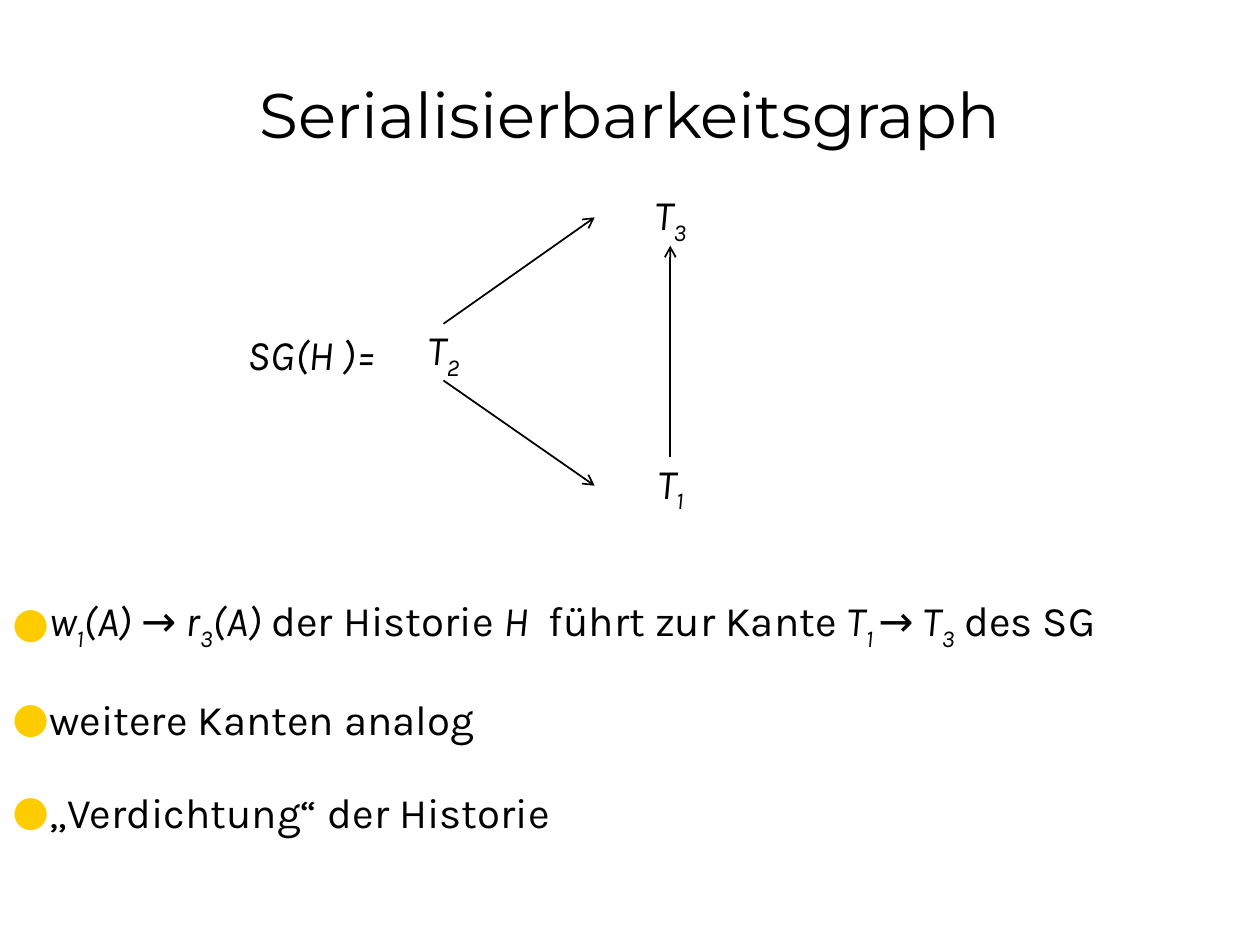
"""Build the slide on the serialisation graph."""
from lxml import etree
from pptx import Presentation
from pptx import util as u
from pptx.dml.color import RGBColor
from pptx.enum import shapes, text
from pptx.oxml.ns import qn

COLORS = {"ink": "000000", "dot": "FFCC00"}
TITLE = "Serialisierbarkeitsgraph"
LABEL = [("SG(H )=", "i")]
NODES = {"3": (4.72, 1.5), "1": (4.72, 3.63), "2": (2.92, 2.57)}
NODE_SIZE = (1.2, 0.45)
EDGES = [("1", 0, "3", 2), ("2", 2, "1", 1), ("2", 0, "3", 1)]
BULLETS = [
    [("w", "i"), ("1", "is"), ("(A) → r", "i"), ("3", "is"), ("(A)", "i"),
     (" der Historie ", ""), ("H", "i"), ("  führt zur Kante ", ""),
     ("T", "i"), ("1 ", "is"), ("→ T", "i"), ("3", "is"), (" des SG", "")],
    [("weitere Kanten analog", "")],
    [("„Verdichtung“ der Historie", "")],
]


def add_bullet(para):
    props = para._p.get_or_add_pPr()
    props.set("marL", str(u.Inches(0.24)))
    props.set("indent", str(u.Inches(-0.24)))
    color = etree.SubElement(props, qn("a:buClr"))
    etree.SubElement(color, qn("a:srgbClr"), val=COLORS["dot"])
    etree.SubElement(props, qn("a:buFont"), typeface="Karla")
    etree.SubElement(props, qn("a:buChar"), char="●")


def write(shape, paras, size=24, face="Karla", align=text.PP_ALIGN.CENTER,
          anchor=text.MSO_ANCHOR.MIDDLE, gap=0, bullet=False):
    frame = shape.text_frame
    frame.word_wrap = True
    frame.vertical_anchor = anchor
    for n, runs in enumerate(paras):
        para = frame.add_paragraph() if n else frame.paragraphs[0]
        if bullet:
            add_bullet(para)
        para.alignment = align
        para.space_before = u.Pt(gap if n else 0)
        para.space_after = u.Pt(gap)
        for words, style in runs:
            run = para.add_run()
            run.text = words
            font = run.font
            font.name, font.size = face, u.Pt(size)
            font.italic = "i" in style
            font.color.rgb = RGBColor.from_string(COLORS["ink"])
            if "s" in style:
                run._r.get_or_add_rPr().set("baseline", "-25000")


def add_box(slide, place, paras, **look):
    box = slide.shapes.add_textbox(*map(u.Inches, place))
    write(box, paras, **look)
    return box


def add_edge(slide, start, out, end, into):
    line = slide.shapes.add_connector(shapes.MSO_CONNECTOR.STRAIGHT, 0, 0, 0, 0)
    line.begin_connect(start, out)
    line.end_connect(end, into)
    line.line.width = u.Pt(1)
    line.line.color.rgb = RGBColor.from_string(COLORS["ink"])
    etree.SubElement(line.line._get_or_add_ln(), qn("a:tailEnd"), type="arrow")
    etree.SubElement(line._element.spPr, qn("a:effectLst"))


def main():
    deck = Presentation()
    deck.slide_width, deck.slide_height = u.Inches(10), u.Inches(7.5)
    slide = deck.slides.add_slide(deck.slide_layouts[5])
    title = slide.shapes.title
    title.left, title.top = 0, 0
    title.width, title.height = u.Inches(10), u.Inches(1.25)
    write(title, [[(TITLE, "")]], size=36, face="Montserrat",
          anchor=text.MSO_ANCHOR.BOTTOM)
    add_box(slide, (1.67, 2.5, 1.62, 0.61), [LABEL])
    nodes = {key: add_box(slide, spot + NODE_SIZE, [[("T", "i"), (key, "is")]])
             for key, spot in NODES.items()}
    for start, out, end, into in EDGES:
        add_edge(slide, nodes[start], out, nodes[end], into)
    add_box(slide, (0, 4.67, 10.17, 2.1), BULLETS, gap=12, bullet=True,
            align=text.PP_ALIGN.LEFT, anchor=text.MSO_ANCHOR.TOP)
    deck.save("out.pptx")


if __name__ == "__main__":
    main()
